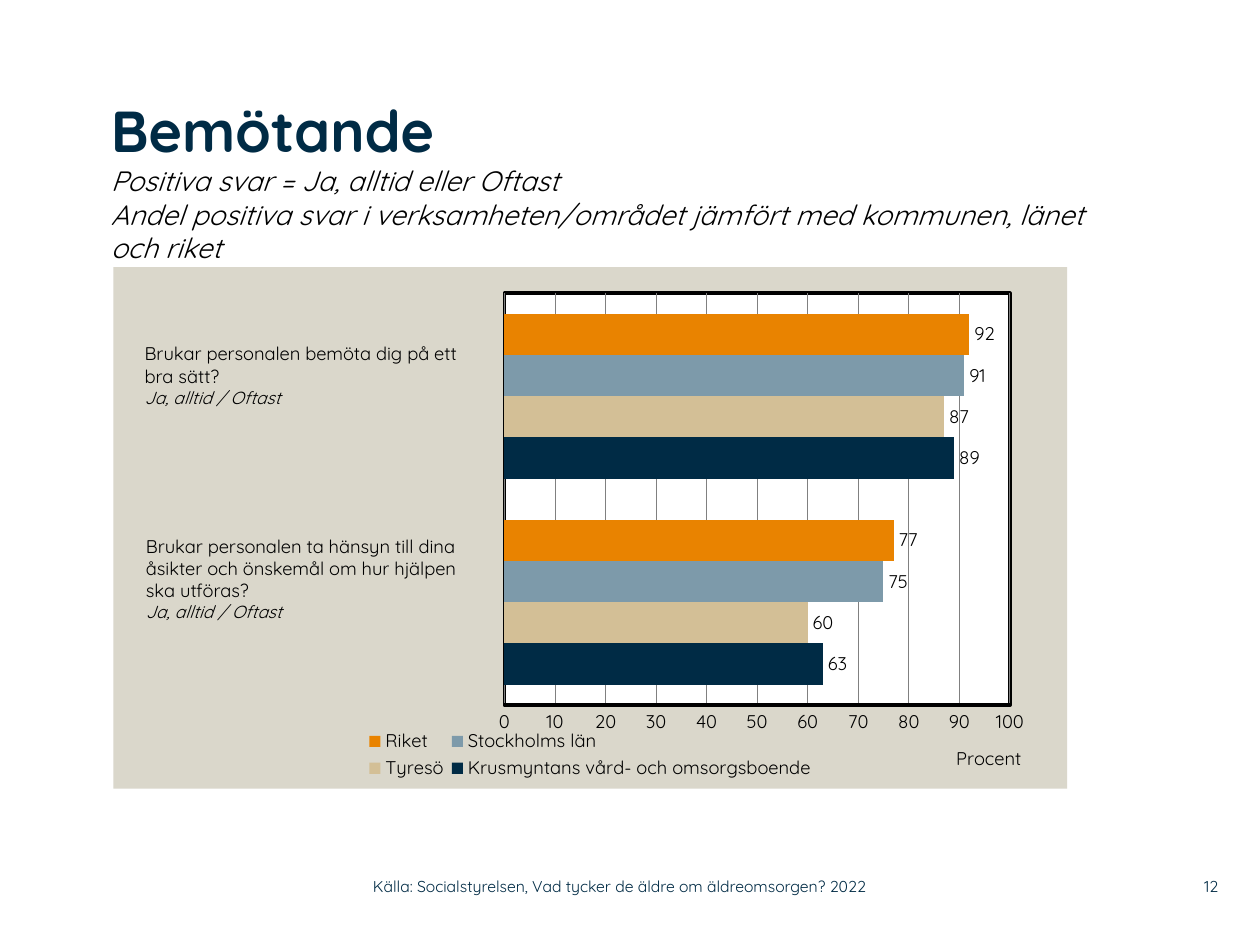
"""Build the slide on how care staff treat residents, with a clustered bar chart."""
from lxml import etree
from pptx import Presentation
from pptx import util as u
from pptx.chart.data import CategoryChartData
from pptx.dml.color import RGBColor
from pptx.enum import chart as ch, text
from pptx.oxml import parse_xml
from pptx.oxml.ns import nsdecls, qn

FONT, NAVY, BLACK = "Quicksand", "002B45", "000000"


def style(font, size, color=BLACK, bold=False, italic=False):
    font.name, font.size, font.bold, font.italic = FONT, u.Pt(size), bold, italic
    font.color.rgb = RGBColor.from_string(color)


def set_layout(parent, after, **values):
    layout = parse_xml(f"<c:layout {nsdecls('c')}><c:manualLayout/></c:layout>")
    for name, value in values.items():
        etree.SubElement(layout[0], qn(f"c:{name}")).set("val", str(value))
    for old in parent.findall(qn("c:layout")):
        parent.remove(old)
    if after is None:
        parent.insert(0, layout)
    else:
        after.addnext(layout)


prs = Presentation()
prs.slide_width, prs.slide_height = u.Inches(10), u.Inches(7.5)
slide = prs.slides.add_slide(prs.slide_layouts[6])

heading = slide.shapes.add_textbox(u.Inches(0.88), u.Inches(0.75), u.Inches(8.04), u.Inches(1.2)).text_frame
heading.word_wrap = True
heading.margin_left = heading.margin_right = heading.margin_top = heading.margin_bottom = 0
heading.text = ("Bemötande\vPositiva svar = Ja, alltid eller Oftast\v"
                "Andel positiva svar i verksamheten/området jämfört med kommunen, länet och riket")
topic, *subtitles = heading.paragraphs[0].runs
style(topic.font, 33, NAVY, bold=True)
for subtitle in subtitles:
    style(subtitle.font, 16, italic=True)

answers = [
    ("Krusmyntans vård- och omsorgsboende", (63, 89), NAVY),
    ("Tyresö", (60, 87), "D3BF96"),
    ("Stockholms län", (75, 91), "7D9AAA"),
    ("Riket", (77, 92), "E98300"),
]
data = CategoryChartData()
data.categories = ["1", "2"]
for name, values, color in answers:
    data.add_series(name, values)
chart = slide.shapes.add_chart(ch.XL_CHART_TYPE.BAR_CLUSTERED, u.Inches(0.9), u.Inches(2.12),
                               u.Inches(7.57), u.Inches(4.14), data).chart
style(chart.font, 10.5)
chart.has_title = False
bars = chart.plots[0]
bars.gap_width, bars.overlap, bars.vary_by_categories = 100, 0, False
for series, (name, values, color) in zip(bars.series, answers):
    series.format.fill.solid()
    series.format.fill.fore_color.rgb = RGBColor.from_string(color)
    labels = series.data_labels
    labels.show_value = True
    labels.position = ch.XL_LABEL_POSITION.OUTSIDE_END
    style(labels.font, 10.5)

chart.category_axis.visible = False
percent = chart.value_axis
percent.minimum_scale, percent.maximum_scale, percent.major_unit = 0, 100, 10
percent.major_tick_mark = percent.minor_tick_mark = ch.XL_TICK_MARK.NONE
percent.format.line.color.rgb = RGBColor.from_string(BLACK)
percent.format.line.width = u.Pt(2)
percent.has_major_gridlines = True
percent.major_gridlines.format.line.color.rgb = RGBColor.from_string("808080")
percent.major_gridlines.format.line.width = u.Pt(0.5)
style(percent.tick_labels.font, 10.5)
percent.axis_title.text_frame.text = "Procent"
style(percent.axis_title.text_frame.paragraphs[0].runs[0].font, 10.5)
axis_title = percent._element.find(qn("c:title"))
set_layout(axis_title, axis_title.find(qn("c:tx")), xMode="edge", yMode="edge", x=0.88, y=0.91)

chart.has_legend = True
chart.legend.position = ch.XL_LEGEND_POSITION.BOTTOM
chart.legend.include_in_layout = False
style(chart.legend.font, 10.5)
legend = chart.legend._element
set_layout(legend, legend.find(qn("c:legendPos")), xMode="edge", yMode="edge", x=0.26, y=0.88, w=0.48, h=0.11)

plot_area = chart._chartSpace.chart.plotArea
set_layout(plot_area, None, layoutTarget="inner", xMode="edge", yMode="edge", x=0.41, y=0.05, w=0.53, h=0.79)
plot_area.append(parse_xml(
    f'<c:spPr {nsdecls("c", "a")}><a:solidFill><a:srgbClr val="FFFFFF"/></a:solidFill>'
    f'<a:ln w="{u.Pt(2)}"><a:solidFill><a:srgbClr val="{BLACK}"/></a:solidFill></a:ln></c:spPr>'))
chart._chartSpace.chart.addnext(parse_xml(
    f'<c:spPr {nsdecls("c", "a")}><a:solidFill><a:srgbClr val="DAD7CB"/></a:solidFill>'
    '<a:ln><a:noFill/></a:ln></c:spPr>'))

questions = [
    (1.05, 2.67, 2.97, 0.81, "Brukar personalen bemöta dig på ett\nbra sätt?"),
    (1.06, 4.2, 3.01, 0.98, "Brukar personalen ta hänsyn till dina\nåsikter och önskemål om hur hjälpen\nska utföras?"),
]
for left, top, width, height, wording in questions:
    question = slide.shapes.add_textbox(u.Inches(left), u.Inches(top), u.Inches(width), u.Inches(height)).text_frame
    question.word_wrap = True
    question.text = wording + "\nJa, alltid / Oftast"
    *lines, options = question.paragraphs
    for line in lines:
        style(line.runs[0].font, 10.5)
    style(options.runs[0].font, 10, italic=True)

footers = [
    (2.96, 4.43, "Källa: Socialstyrelsen, Vad tycker de äldre om äldreomsorgen? 2022", text.PP_ALIGN.LEFT),
    (9.2, 0.47, "12", text.PP_ALIGN.RIGHT),
]
for left, width, wording, align in footers:
    footer = slide.shapes.add_textbox(u.Inches(left), u.Inches(6.89), u.Inches(width), u.Inches(0.29)).text_frame
    footer.word_wrap = True
    footer.margin_left = footer.margin_right = footer.margin_top = footer.margin_bottom = 0
    footer.vertical_anchor = text.MSO_ANCHOR.MIDDLE
    footer.text = wording
    footer.paragraphs[0].alignment = align
    style(footer.paragraphs[0].runs[0].font, 9, NAVY)

prs.save("out.pptx")
